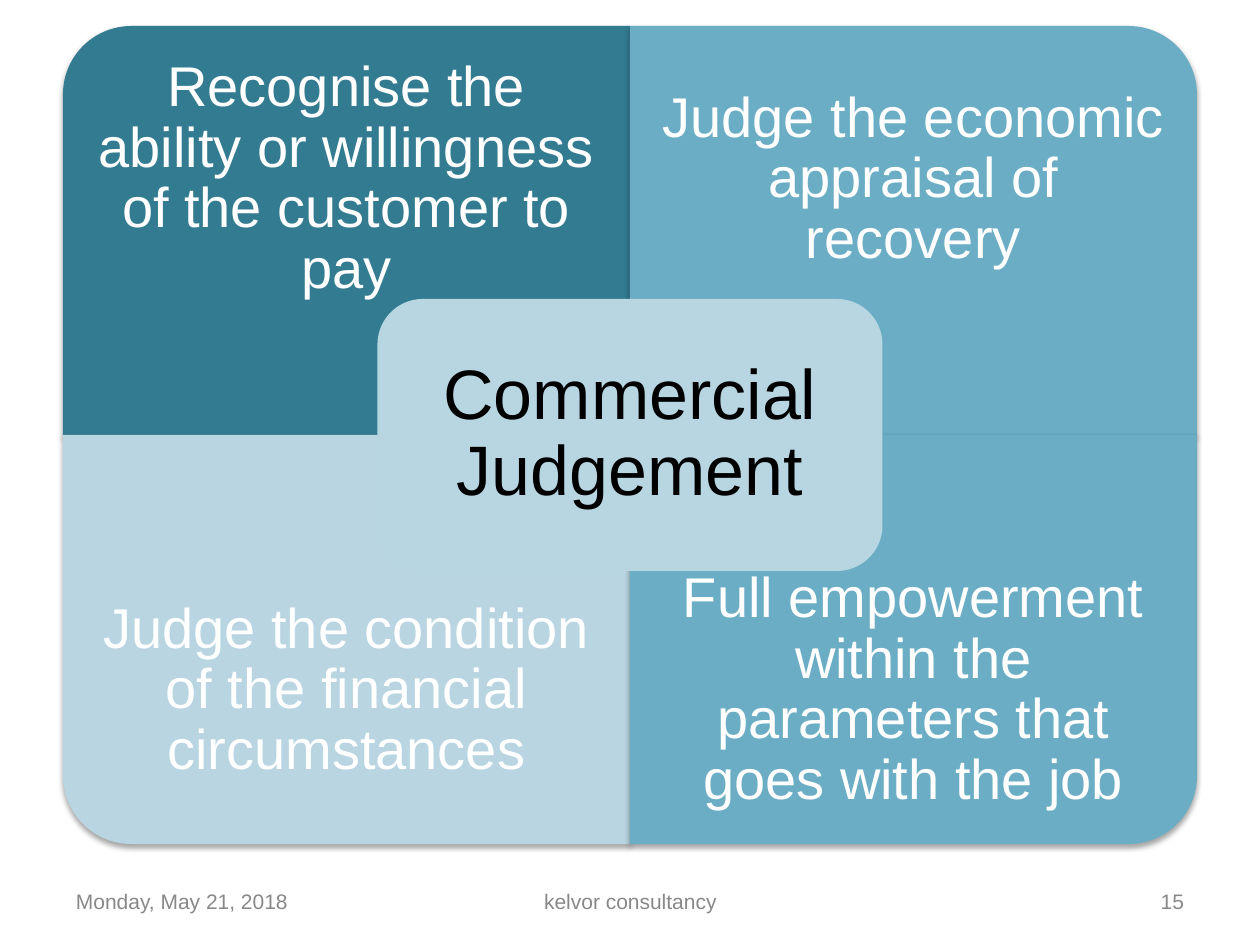
from dataclasses import dataclass

from pptx import Presentation
from pptx.dml.color import RGBColor
from pptx.enum.shapes import MSO_SHAPE
from pptx.enum.text import MSO_ANCHOR, PP_ALIGN
from pptx.oxml import parse_xml
from pptx.oxml.ns import nsdecls
from pptx.util import Emu, Pt

SCALE = 914400 / 126  # EMU in one px


@dataclass(frozen=True)
class Theme:
    font: str = "Arial"
    dark: str = "337B90"
    mid: str = "6AADC4"
    pale: str = "B8D5E1"
    core: str = "B7D6E2"
    white: str = "FFFFFF"
    black: str = "000000"
    grey: str = "888888"
    small: int = 12
    body: int = 32
    large: int = 40


THEME = Theme()

# Matrix grid
LEFT, TOP = 63, 26
WIDE, HIGH = 567, 409
TEXT_HIGH = 307  # part of a panel left free by the core

# Column, row, turn, fill and wording of each panel
PANELS = [
    (0, 0, 270, THEME.dark,
     "Recognise the ability or willingness of the customer to pay"),
    (1, 0, 0, THEME.mid, "Judge the economic appraisal of recovery"),
    (0, 1, 180, THEME.pale,
     "Judge the condition of the financial circumstances"),
    (1, 1, 90, THEME.mid,
     "Full empowerment within the parameters that goes with the job"),
]

# Left, width, alignment and wording of each footer part
FOOTER = [
    (63, 294, PP_ALIGN.LEFT, "Monday, May 21, 2018"),
    (431, 399, PP_ALIGN.CENTER, "kelvor consultancy"),
    (903, 294, PP_ALIGN.RIGHT, "15"),
]


def px(n):
    return Emu(round(n * SCALE))


def style(item, values):
    for name, value in values.items():
        setattr(item, name, value)


def add_text(slide, box, words, size, color, pad, align=PP_ALIGN.CENTER,
             space=0.9):
    frame = slide.shapes.add_textbox(*map(px, box)).text_frame
    side, edge = map(px, pad)
    style(frame, {
        "word_wrap": True, "vertical_anchor": MSO_ANCHOR.MIDDLE,
        "margin_left": side, "margin_right": side,
        "margin_top": edge, "margin_bottom": edge,
    })
    para = frame.paragraphs[0]
    style(para, {"alignment": align, "line_spacing": space})
    run = para.add_run()
    run.text = words
    style(run.font, {"name": THEME.font, "size": Pt(size)})
    run.font.color.rgb = RGBColor.from_string(color)


def add_block(slide, kind, box, fill, turn=0):
    x, y, w, h = box
    if turn % 180:  # swap the sides about the same centre
        x, y, w, h = x + (w - h) / 2, y + (h - w) / 2, h, w
    block = slide.shapes.add_shape(kind, *map(px, (x, y, w, h)))
    block.rotation = turn
    block.adjustments[0] = 0.167
    block.fill.solid()
    block.fill.fore_color.rgb = RGBColor.from_string(fill)
    block.line.fill.background()
    block.shadow.inherit = False
    return block


def add_shadow(block):
    shade = parse_xml(
        f'<a:outerShdw {nsdecls("a")} blurRad="{Pt(3.1)}" dist="{Pt(1.8)}" '
        f'dir="5400000" rotWithShape="0"><a:srgbClr val="{THEME.black}">'
        '<a:alpha val="35000"/></a:srgbClr></a:outerShdw>')
    block.element.spPr.find(
        "{http://schemas.openxmlformats.org/drawingml/2006/main}effectLst"
    ).append(shade)


def add_panel(slide, col, row, turn, fill, words):
    x, y = LEFT + col * WIDE, TOP + row * HIGH
    add_shadow(add_block(slide, MSO_SHAPE.ROUND_1_RECTANGLE,
                         (x, y, WIDE, HIGH), fill, turn))
    y += row * (HIGH - TEXT_HIGH)
    add_text(slide, (x, y, WIDE, TEXT_HIGH), words, THEME.body,
             THEME.white, (31, 31))


def add_core(slide, words):
    w, h, gap = 505, 272, 13
    x, y = LEFT + WIDE - w / 2, TOP + HIGH - h / 2
    add_block(slide, MSO_SHAPE.ROUNDED_RECTANGLE, (x, y, w, h), THEME.core)
    add_text(slide, (x + gap, y + gap, w - 2 * gap, h - 2 * gap), words,
             THEME.large, THEME.black, (21, 21))


def main():
    deck = Presentation()
    style(deck, {"slide_width": px(1260), "slide_height": px(945)})
    slide = deck.slides.add_slide(deck.slide_layouts[6])

    # Footer
    for x, w, align, words in FOOTER:
        add_text(slide, (x, 876, w, 50), words, THEME.small, THEME.grey,
                 (13, 6), align, 1.0)

    # Matrix with its core on top
    for panel in PANELS:
        add_panel(slide, *panel)
    add_core(slide, "Commercial Judgement")

    deck.save("out.pptx")


if __name__ == "__main__":
    main()
